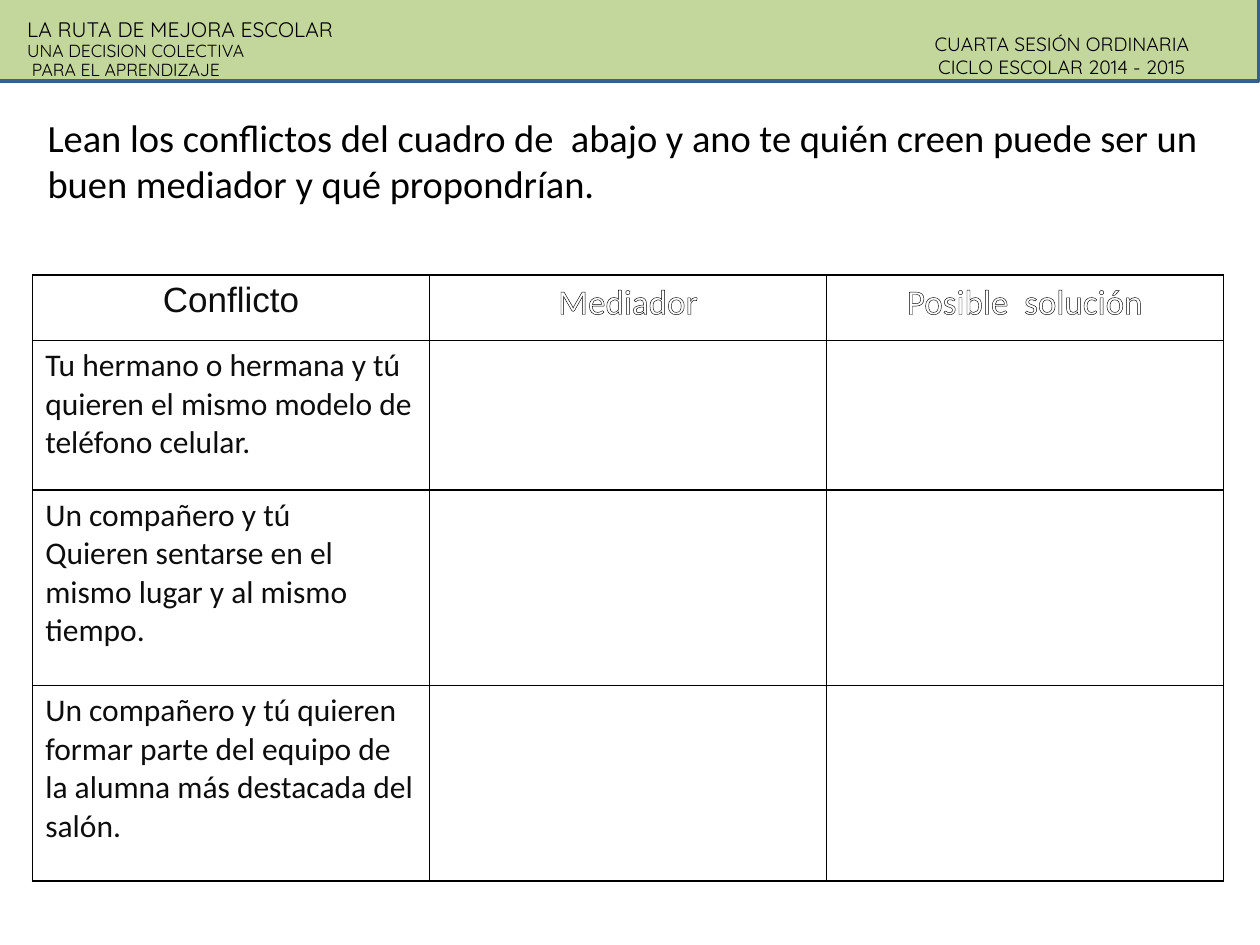
from lxml import etree
from pptx import Presentation
from pptx import util as u
from pptx.dml import color
from pptx.enum import shapes, text
from pptx.oxml import ns

ROWS = [
    ["Tu hermano o hermana y tú quieren el mismo modelo de teléfono celular."],
    ["Un compañero y tú",
     "Quieren sentarse en el mismo lugar y al mismo tiempo."],
    ["Un compañero y tú quieren formar parte del equipo de la alumna más "
     "destacada del salón."],
]
HEADS = [("Conflicto", "Arial", "0D0D0D"),
         ("Mediador", "Calibri", "FFFFFF"),
         ("Posible  solución", "Calibri", "FFFFFF")]


def paint(fill, tint):
    fill.solid()
    fill.fore_color.rgb = color.RGBColor.from_string(tint)


def line(tag, tint, width):
    node = etree.Element(ns.qn(tag), w=str(u.Pt(width)))
    fill = etree.SubElement(node, ns.qn("a:solidFill"))
    etree.SubElement(fill, ns.qn("a:srgbClr"), val=tint)
    return node


def write(para, words, size, face, tint="000000"):
    run = para.add_run()
    run.text = words
    run.font.size = u.Pt(size)
    run.font.name = face
    paint(run.font.fill, tint)
    return run


def fill_box(slide, box, lines, face, align=None, space=None):
    frame = slide.shapes.add_textbox(*map(u.Cm, box)).text_frame
    frame.word_wrap = True
    frame.auto_size = text.MSO_AUTO_SIZE.SHAPE_TO_FIT_TEXT
    for i, (words, size) in enumerate(lines):
        para = frame.add_paragraph() if i else frame.paragraphs[0]
        para.alignment = align
        para.line_spacing = space
        write(para, words, size, face)


def add_head(slide, x, y, w, h):
    band = slide.shapes.add_shape(
        shapes.MSO_SHAPE.RECTANGLE, *map(u.Cm, (x, y, w, h)))
    band.shadow.inherit = False
    paint(band.fill, "C3D69B")
    paint(band.line.fill, "3A5F8C")
    band.line.width = u.Pt(2)
    fill_box(slide, (x + 0.33, y + 0.91, 7.19, 1.85),
             [("LA RUTA DE MEJORA ESCOLAR", 12),
              ("UNA DECISION COLECTIVA", 10),
              (" PARA EL APRENDIZAJE", 10)],
             "Quicksand", space=u.Pt(11))
    fill_box(slide, (x + 18.14, y + 1.11, 6.6, 1.19),
             [("CUARTA SESIÓN ORDINARIA", 11),
              ("CICLO ESCOLAR 2014 - 2015", 11)],
             "Quicksand", align=text.PP_ALIGN.CENTER)


def add_task(slide, x, y, w, h):
    fill_box(slide, (x, y, w, h),
             [("Lean los conflictos del cuadro de  abajo y ano te quién creen "
               "puede ser un buen mediador y qué propondrían.", 22)],
             "Calibri")


def write_cell(para, words, size, face, tint):
    run = write(para, words, size, face, tint)
    run.font.fill._xPr.insert(0, line("a:ln", "000000", 0.75))


def style_cell(cell):
    paint(cell.fill, "FFFFFF")
    props = cell._tc.get_or_add_tcPr()
    for i, side in enumerate("LRTB"):
        props.insert(i, line("a:ln" + side, "000000", 1))


def add_grid(slide, x, y, w, h):
    grid = slide.shapes.add_table(
        len(ROWS) + 1, len(HEADS), *map(u.Cm, (x, y, w, h))).table
    for col in grid.columns:
        col.width = u.Cm(w / len(HEADS))
    for row, tall in zip(grid.rows, (1.32, 3.02, 3.94, 3.94)):
        row.height = u.Cm(tall)
    for cell in grid.iter_cells():
        style_cell(cell)
    for i, (words, face, tint) in enumerate(HEADS):
        para = grid.cell(0, i).text_frame.paragraphs[0]
        para.alignment = text.PP_ALIGN.CENTER
        write_cell(para, words, 20, face, tint)
    for i, paras in enumerate(ROWS, 1):
        frame = grid.cell(i, 0).text_frame
        for j, words in enumerate(paras):
            para = frame.add_paragraph() if j else frame.paragraphs[0]
            write_cell(para, words, 18, "Calibri", "0D0D0D")


def main():
    deck = Presentation()
    deck.slide_width, deck.slide_height = u.Cm(25.4), u.Cm(19.05)
    slide = deck.slides.add_slide(deck.slide_layouts[6])
    add_head(slide, -0.03, -0.58, 25.4, 2.21)
    add_grid(slide, 0.66, 5.54, 24, 12.22)
    add_task(slide, 0.71, 2.18, 24, 2.13)
    deck.save("out.pptx")


if __name__ == "__main__":
    main()
